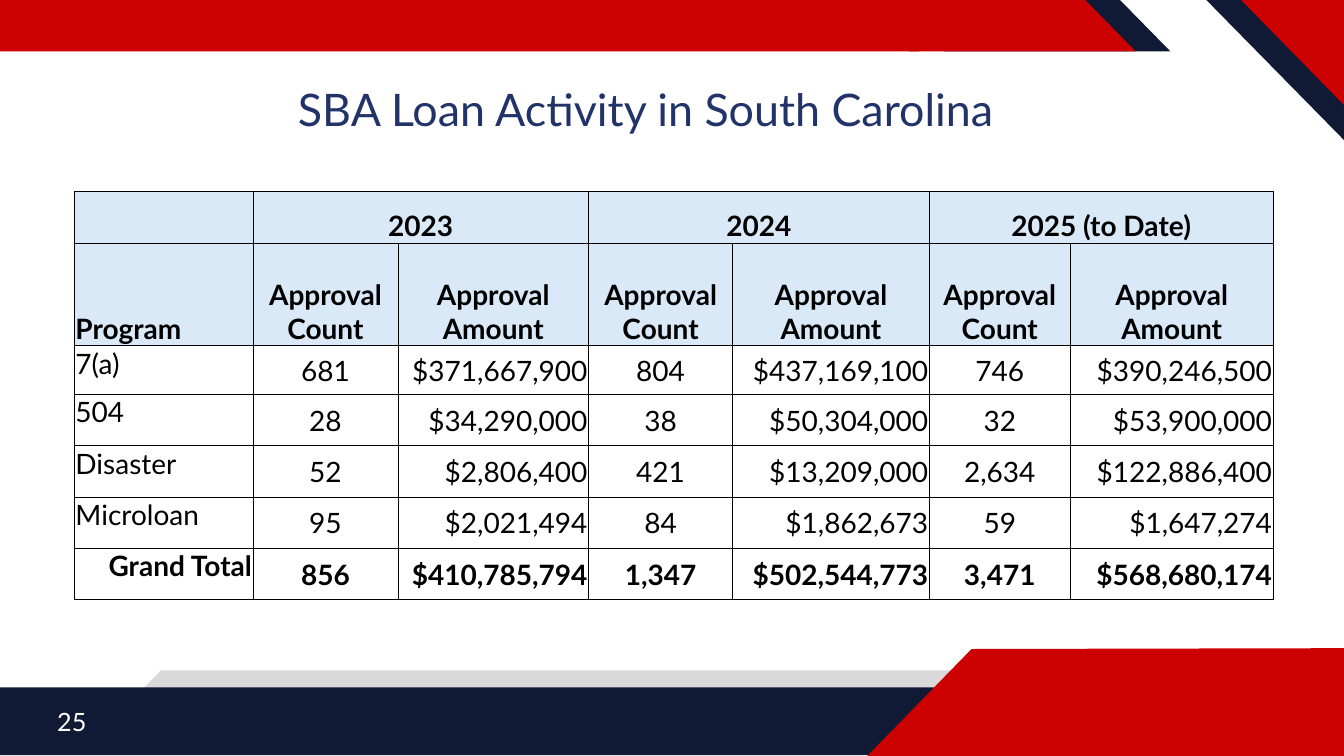
from dataclasses import dataclass
from lxml.etree import SubElement as Sub
from pptx import Presentation as Deck
from pptx.dml.color import RGBColor as Color
from pptx.enum.shapes import MSO_SHAPE as Kind
from pptx.enum.text import MSO_ANCHOR as Anchor, PP_ALIGN as Align
from pptx.oxml.ns import qn
from pptx.util import Pt

NAVY = Color(0x11, 0x1A, 0x34)
RED = Color(0xCC, 0x00, 0x00)
GREY = Color(0xD9, 0xD9, 0xD9)
BLUE = Color(0x22, 0x33, 0x69)
PALE = Color(0xDA, 0xE9, 0xF8)
BLACK = Color(0, 0, 0)
WHITE = Color(0xFF, 0xFF, 0xFF)
FONT = "Lato"
WIDE, HIGH = 960, 540


@dataclass
class Bar:
    left: float
    top: float
    width: float
    height: float
    fill: Color


@dataclass
class Patch:
    points: list[tuple[float, float]]
    fill: Color


@dataclass
class Label:
    left: float
    top: float
    width: float
    height: float
    text: str
    size: float
    color: Color
    align: Align
    space: float = 1.0


def corner(reach: float, drop: float, fill: Color) -> Patch:
    return Patch([(WIDE - reach, 0), (WIDE, 0), (WIDE, drop)], fill)


def tip(left: float, fill: Color) -> Patch:
    return Patch([(left, 0), (left + 126, 0), (left + 162, 36.7), (left, 36.7)], fill)


DECOR = [
    corner(98.3, 100, NAVY),
    tip(674, NAVY),
    Patch([(115, 478.8), (734, 478.8), (734, 513.5), (81.5, 513.5)], GREY),
    Bar(0, 491, WIDE, 48.5, NAVY),
    Patch([(694, 463.6), (WIDE, 463), (WIDE, HIGH), (619.5, HIGH)], RED),
    Bar(0, 0, 656.6, 36.7, RED),
    tip(649.2, RED),
    corner(73.5, 75, RED),
]

LABELS = [
    Label(33.8, 501, 216, 28.8, "25", 18, WHITE, Align.LEFT),
    Label(21.6, 60.5, 887.8, 39.6, "SBA Loan Activity in South Carolina ",
          32, BLUE, Align.CENTER, 0.9),
]

COLS = [127.4, 103.7, 136.1, 103, 140.4, 100.8, 144.8]
ROWS = [36.7, 73.4, 34.7] + [36.7] * 4
YEARS = ["2023", "2024", "2025 (to Date)"]
DATA = [
    ["", *(text for year in YEARS for text in (year, ""))],
    ["Program"] + ["Approval Count", "Approval Amount"] * 3,
    ["7(a)", "681", "$371,667,900", "804", "$437,169,100", "746", "$390,246,500"],
    ["504", "28", "$34,290,000", "38", "$50,304,000", "32", "$53,900,000"],
    ["Disaster", "52", "$2,806,400", "421", "$13,209,000", "2,634", "$122,886,400"],
    ["Microloan", "95", "$2,021,494", "84", "$1,862,673", "59", "$1,647,274"],
    ["Grand Total", "856", "$410,785,794", "1,347", "$502,544,773", "3,471",
     "$568,680,174"],
]


def paint(shape, fill: Color) -> None:
    shape.shadow.inherit = False
    shape.fill.solid()
    shape.fill.fore_color.rgb = fill
    shape.line.fill.background()


def draw(shapes, item: Bar | Patch) -> None:
    if isinstance(item, Bar):
        shape = shapes.add_shape(Kind.RECTANGLE, Pt(item.left), Pt(item.top),
                                 Pt(item.width), Pt(item.height))
    else:
        first, *rest = [(Pt(x), Pt(y)) for x, y in item.points]
        pen = shapes.build_freeform(*first)
        pen.add_line_segments(rest, close=True)
        shape = pen.convert_to_shape()
    paint(shape, item.fill)


def write(para, text: str, size: float, color: Color, bold: bool = False) -> None:
    run = para.add_run()
    run.text = text
    font = run.font
    font.name, font.size, font.bold = FONT, Pt(size), bold
    font.color.rgb = color


def put(shapes, item: Label) -> None:
    box = shapes.add_textbox(Pt(item.left), Pt(item.top), Pt(item.width), Pt(item.height))
    frame = box.text_frame
    frame.word_wrap = True
    frame.vertical_anchor = Anchor.MIDDLE
    para = frame.paragraphs[0]
    para.alignment, para.line_spacing = item.align, item.space
    write(para, item.text, item.size, item.color)


def frame_cell(cell) -> None:
    props = cell._tc.get_or_add_tcPr()
    for side in ("lnL", "lnR", "lnT", "lnB"):
        line = Sub(props, qn(f"a:{side}"), w=str(Pt(0.5)))
        Sub(Sub(line, qn("a:solidFill")), qn("a:srgbClr"), val=str(BLACK))


def place(row: int, col: int) -> tuple[Align, Anchor]:
    head, total = row < 2, row == len(DATA) - 1
    if col == 0:
        align = Align.RIGHT if total else Align.LEFT
        return align, Anchor.BOTTOM if head else Anchor.TOP
    if head:
        return Align.CENTER, Anchor.BOTTOM
    return Align.CENTER if col % 2 else Align.RIGHT, Anchor.MIDDLE


def fill_cell(cell, row: int, col: int, text: str) -> None:
    frame_cell(cell)
    cell.margin_left = cell.margin_right = cell.margin_top = Pt(0.7)
    cell.margin_bottom = Pt(0)
    if row < 2:
        cell.fill.solid()
        cell.fill.fore_color.rgb = PALE
    else:
        cell.fill.background()
    align, cell.vertical_anchor = place(row, col)
    para = cell.text_frame.paragraphs[0]
    para.alignment = align
    if text:
        write(para, text, 20, BLACK, row < 2 or row == len(DATA) - 1)


def add_loans(shapes) -> None:
    table = shapes.add_table(len(ROWS), len(COLS), Pt(53.2), Pt(136.8),
                             Pt(sum(COLS)), Pt(sum(ROWS))).table
    table.first_row = table.horz_banding = False
    for col, width in zip(table.columns, COLS):
        col.width = Pt(width)
    for row, height in zip(table.rows, ROWS):
        row.height = Pt(height)
    for row, texts in enumerate(DATA):
        for col, text in enumerate(texts):
            fill_cell(table.cell(row, col), row, col, text)
    for col in range(1, len(COLS), 2):
        table.cell(0, col).merge(table.cell(0, col + 1))


def main() -> None:
    deck = Deck()
    deck.slide_width, deck.slide_height = Pt(WIDE), Pt(HIGH)
    shapes = deck.slides.add_slide(deck.slide_layouts[6]).shapes
    for item in DECOR:
        draw(shapes, item)
    for item in LABELS:
        put(shapes, item)
    add_loans(shapes)
    deck.save("out.pptx")


if __name__ == "__main__":
    main()
